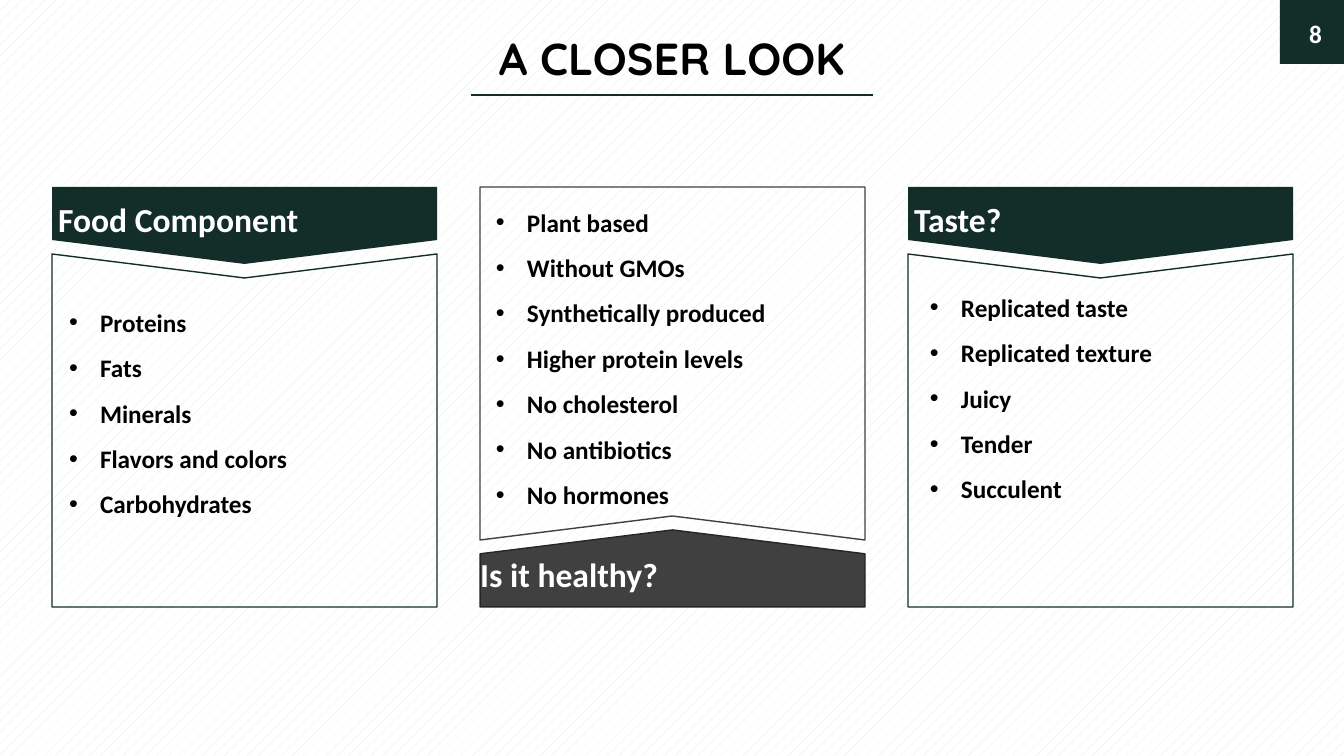
from lxml import etree
from pptx import Presentation
from pptx.dml.color import RGBColor
from pptx.enum.dml import MSO_PATTERN
from pptx.enum.shapes import MSO_CONNECTOR, MSO_SHAPE
from pptx.enum.text import MSO_ANCHOR, PP_ALIGN
from pptx.oxml.ns import qn
from pptx.util import Pt

TOP, MIDDLE = MSO_ANCHOR.TOP, MSO_ANCHOR.MIDDLE
LEFT, CENTER, RIGHT = PP_ALIGN.LEFT, PP_ALIGN.CENTER, PP_ALIGN.RIGHT
RECTANGLE, PENTAGON = MSO_SHAPE.RECTANGLE, MSO_SHAPE.PENTAGON
STRAIGHT = MSO_CONNECTOR.STRAIGHT
PERCENT_10 = MSO_PATTERN.PERCENT_10

# Content
TITLE = "A CLOSER LOOK"
PAGE_NUMBER = "8"
COLUMNS = [
    {"heading": "Food Component", "points_down": True,
     "color": "green", "outline": None,
     "list_box": (69, 292, 351, 287), "list_insets": (0, 0, 0, 0),
     "items": ["Proteins", "Fats", "Minerals", "Flavors and colors",
               "Carbohydrates"]},
    {"heading": "Is it healthy?", "points_down": False,
     "color": "gray", "outline": "dark_gray",
     "list_box": (496, 192, 350, 307), "list_insets": (0, 0, 0, 0),
     "items": ["Plant based", "Without GMOs", "Synthetically produced",
               "Higher protein levels", "No cholesterol", "No antibiotics",
               "No hormones"]},
    {"heading": "Taste?", "points_down": True,
     "color": "green", "outline": None,
     "list_box": (920, 272, 372, 235), "list_insets": (10, 5, 10, 5),
     "items": ["Replicated taste", "Replicated texture", "Juicy", "Tender",
               "Succulent"]},
]
COLORS = {"green": "132D29", "gray": "404040", "dark_gray": "262626",
          "white": "FFFFFF", "black": "000000", "hatch": "E7E6E6"}

# Layout in px
SLIDE_W, SLIDE_H = 1344, 756
COLUMN_X, COLUMN_W, COLUMN_STEP = 52, 385, 428
COLUMN_TOP, COLUMN_BOTTOM = 187, 607
BANNER_H, PANEL_H, NOTCH = 77, 353, 24
BULLET_INDENT = 31


def px(length):
    return round(length * 914400 / 100.8)


def rgb(name):
    return RGBColor.from_string(COLORS[name])


def write(shape, lines, size, color, align=LEFT, anchor=TOP,
          insets=(0, 0, 0, 0), font="Calibri"):
    frame = shape.text_frame
    frame.word_wrap = True
    frame.vertical_anchor = anchor
    (frame.margin_left, frame.margin_top,
     frame.margin_right, frame.margin_bottom) = map(px, insets)
    frame.text = "\n".join(lines)
    for paragraph in frame.paragraphs:
        paragraph.alignment = align
        for run in paragraph.runs:
            run.font.name = font
            run.font.size = Pt(size)
            run.font.bold = True
            run.font.color.rgb = rgb(color)
    return frame


def add_text(box, lines, size, color, **options):
    return write(slide.shapes.add_textbox(*map(px, box)), lines, size, color,
                 **options)


def add_block(kind, box, color, outline=None):
    block = slide.shapes.add_shape(kind, *map(px, box))
    block.shadow.inherit = False
    block.fill.solid()
    block.fill.fore_color.rgb = rgb(color)
    if outline:
        block.line.color.rgb = rgb(outline)
        block.line.width = Pt(1)
    else:
        block.line.fill.background()
    return block


def add_banner(left, column):
    """Turned pentagon whose tip points towards the panel."""
    down = column["points_down"]
    top = COLUMN_TOP if down else COLUMN_BOTTOM - BANNER_H
    shift = (COLUMN_W - BANNER_H) / 2
    banner = add_block(PENTAGON,
                       (left + shift, top - shift, BANNER_H, COLUMN_W),
                       column["color"], column["outline"])
    banner.adjustments[0] = 0.31
    banner.rotation = 270 if down else 90
    xfrm = banner.element.spPr.find(qn("a:xfrm"))
    xfrm.set("flipH", "1")
    if not down:
        xfrm.set("flipV", "1")
    frame = write(banner, [column["heading"]], 24, "white", align=CENTER,
                  anchor=TOP if down else MIDDLE,
                  insets=(6, 6, 12, 6) if down else (0, 0, 0, 0))
    banner.element.txBody.find(qn("a:bodyPr")).set("vert", "eaVert")
    return frame


def add_panel(left, column):
    """Outlined box with a notch on the side that faces the banner."""
    if column["points_down"]:
        near, far, tip = COLUMN_BOTTOM - PANEL_H, COLUMN_BOTTOM, NOTCH
    else:
        near, far, tip = COLUMN_TOP + PANEL_H, COLUMN_TOP, -NOTCH
    right = left + COLUMN_W
    corners = [(left + COLUMN_W / 2, near + tip), (right, near),
               (right, far), (left, far)]
    builder = slide.shapes.build_freeform(px(left), px(near))
    builder.add_line_segments([(px(x), px(y)) for x, y in corners], close=True)
    panel = builder.convert_to_shape()
    panel.shadow.inherit = False
    panel.fill.background()
    panel.line.color.rgb = rgb(column["color"])
    panel.line.width = Pt(1)


def add_list(column):
    frame = add_text(column["list_box"], column["items"], 18, "black",
                     insets=column["list_insets"])
    for paragraph in frame.paragraphs:
        paragraph.line_spacing = 1.5
        properties = paragraph._p.get_or_add_pPr()
        properties.set("marL", str(px(BULLET_INDENT)))
        properties.set("indent", str(-px(BULLET_INDENT)))
        etree.SubElement(properties, qn("a:buFont")).set("typeface", "Arial")
        etree.SubElement(properties, qn("a:buChar")).set("char", "•")


# Slide and background
prs = Presentation()
prs.slide_width, prs.slide_height = px(SLIDE_W), px(SLIDE_H)
slide = prs.slides.add_slide(prs.slide_layouts[6])
background = slide.background.fill
background.patterned()
background.pattern = PERCENT_10
background.fore_color.rgb = rgb("hatch")
background.back_color.rgb = rgb("white")

# Page number
add_block(RECTANGLE, (SLIDE_W - 64, 0, 64, 64), "green")
add_text((1285, 14, 47, 38), [PAGE_NUMBER], 18, "white", align=RIGHT,
         anchor=MIDDLE, insets=(10, 5, 10, 5))

# Title and its rule
add_text((141, 31, 1062, 54), [TITLE], 32, "black", align=CENTER,
         anchor=MIDDLE, font="Quicksand")
title_rule = slide.shapes.add_connector(STRAIGHT, px(471), px(95),
                                        px(873), px(95))
title_rule.line.color.rgb = rgb("green")
title_rule.line.width = Pt(1.5)
etree.SubElement(title_rule.element.spPr, qn("a:effectLst"))

# Columns
for index, column in enumerate(COLUMNS):
    column_left = COLUMN_X + index * COLUMN_STEP
    add_banner(column_left, column)
    add_panel(column_left, column)
    add_list(column)

prs.save("out.pptx")
